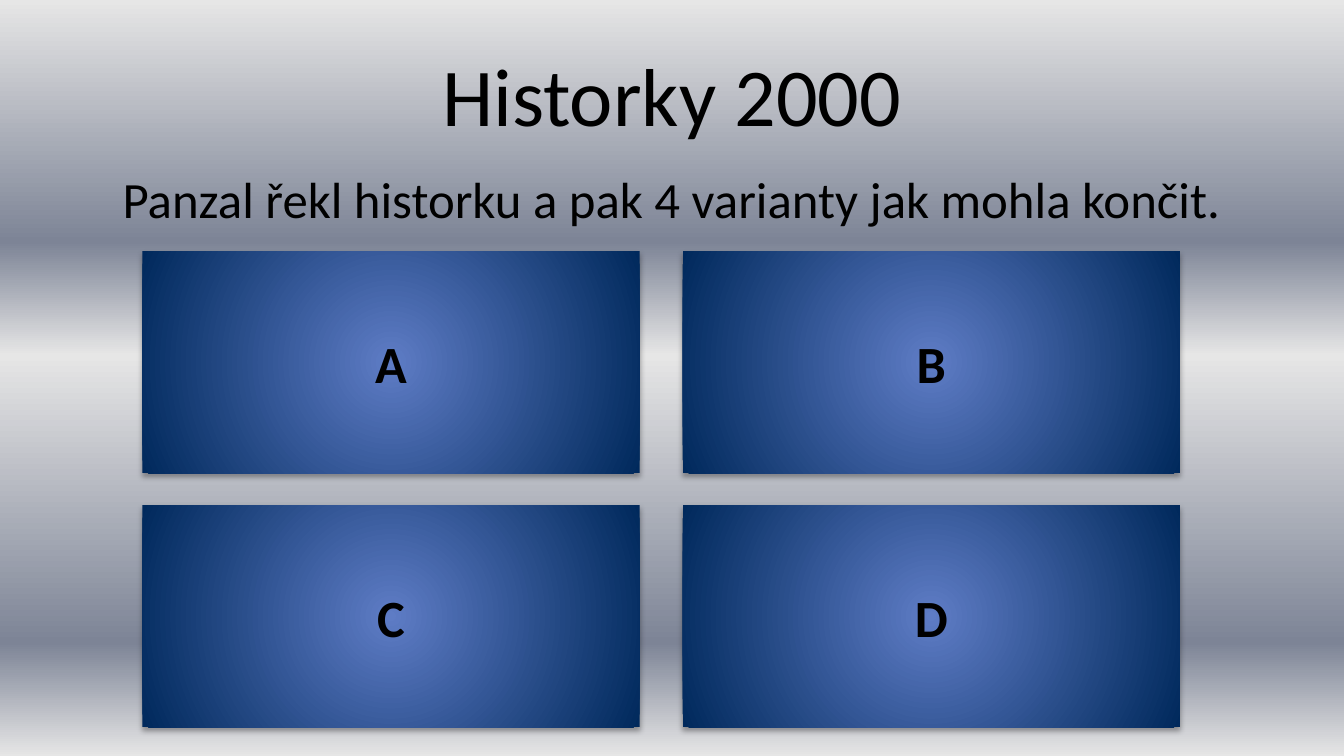
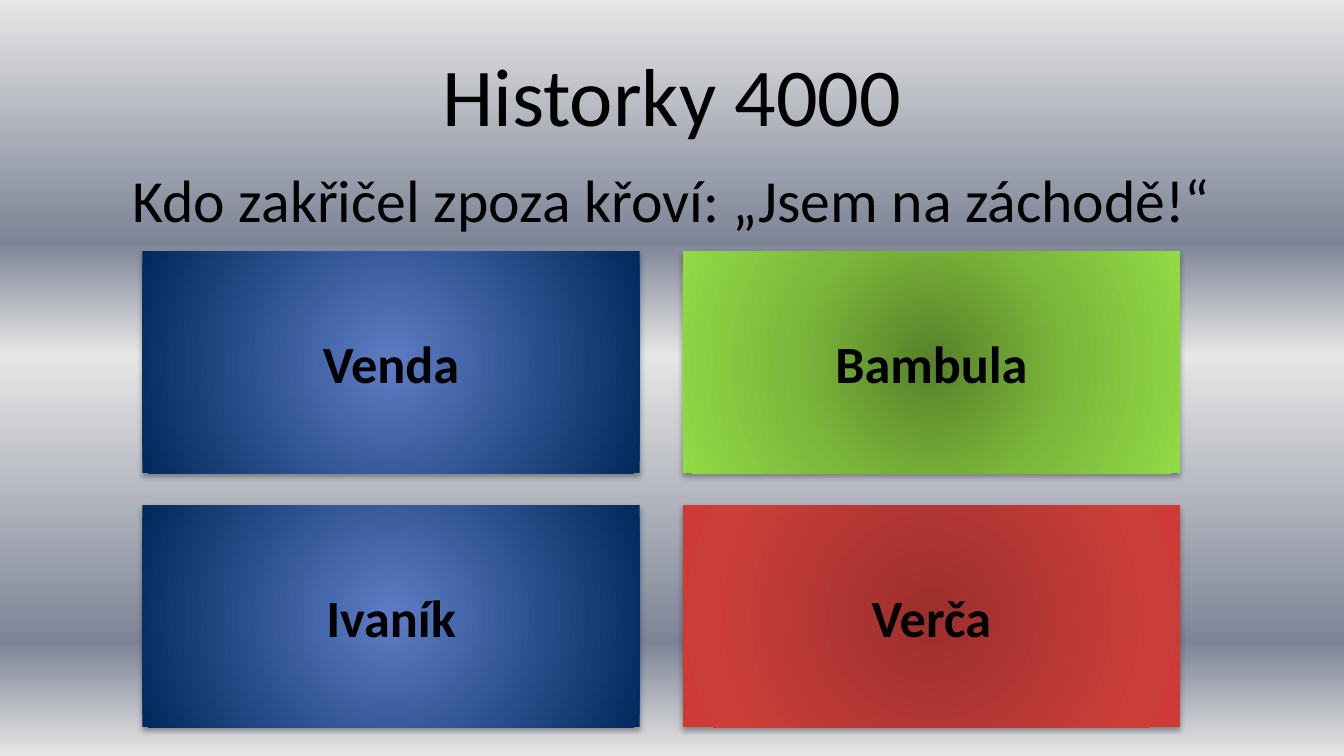
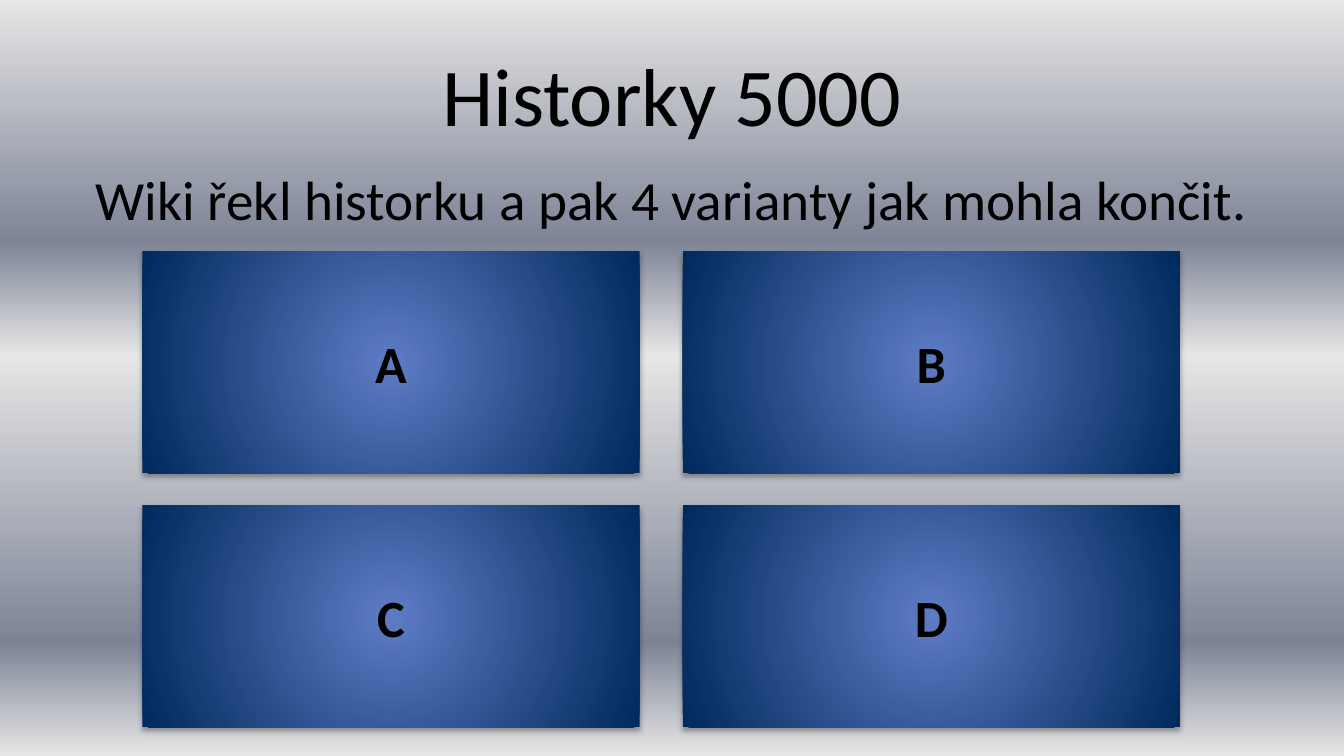
from lxml.etree import SubElement
from pptx import Presentation
from pptx.dml.color import RGBColor
from pptx.enum.shapes import MSO_SHAPE as Shape
from pptx.enum.text import MSO_ANCHOR as Anchor, MSO_AUTO_SIZE as AutoSize, PP_ALIGN as Align
from pptx.oxml.ns import qn
from pptx.util import Pt

SILVER = [(0, "E6E6E6"), (32, "7D8496"), (47, "E6E6E6"), (85, "7D8496"), (100, "E6E6E6")]
BLUE = [(0, "5E7CC5"), (100, "00295C")]
GREEN = [(0, "57812A"), (50, "7BB73B"), (100, "92DA46")]
RED = [(0, "9C2F2D"), (80, "CB3E3A"), (100, "CE3B37")]

QUIZ = [
    ("Historky 2000", "Panzal řekl historku a pak 4 varianty jak mohla končit.", 27.2,
     [("A", BLUE), ("B", BLUE), ("C", BLUE), ("D", BLUE)]),
    ("Historky 4000", "Kdo zakřičel zpoza křoví: „Jsem na záchodě!“", 32,
     [("Venda", BLUE), ("Bambula", GREEN), ("Ivaník", BLUE), ("Verča", RED)]),
    ("Historky 5000", "Wiki řekl historku a pak 4 varianty jak mohla končit.", 29.6,
     [("A", BLUE), ("B", BLUE), ("C", BLUE), ("D", BLUE)]),
]


def rgb(value):
    return RGBColor.from_string(value)


def add(parent, tag, **attrs):
    return SubElement(parent, qn(tag), {k: str(v) for k, v in attrs.items()})


def write(sp, text, size=28, bold=False, color="000000", font="Calibri"):
    tf = sp.text_frame
    tf.word_wrap = True
    tf.auto_size = AutoSize.NONE
    tf.vertical_anchor = Anchor.MIDDLE
    p = tf.paragraphs[0]
    p.alignment = Align.CENTER
    r = p.add_run()
    r.text = text
    r.font.name = font
    r.font.size = Pt(size)
    r.font.bold = bold
    r.font.color.rgb = rgb(color)


def set_gradient(owner, fill, stops, radial=False):
    fill.gradient()
    grad = next(owner.iter(qn("a:gradFill")))
    for child in list(grad):
        grad.remove(child)
    gs_list = add(grad, "a:gsLst")
    for pos, color in stops:
        add(add(gs_list, "a:gs", pos=pos * 1000), "a:srgbClr", val=color)
    if radial:
        circle = add(grad, "a:path", path="circle")
        add(circle, "a:fillToRect", l=50000, t=50000, r=50000, b=50000)
    else:
        add(grad, "a:lin", ang=90 * 60000, scaled=0)


class QuizDeck:
    """Quiz slides with a title, a question and a grid of answer cards."""

    left, top = 76.32, 134.64
    card_w, card_h = 266.4, 118.8
    step_x, step_y = 289.44, 136.08

    def __init__(self):
        self.prs = Presentation()
        self.prs.slide_width, self.prs.slide_height = Pt(720), Pt(405)
        master = self.prs.slide_master
        set_gradient(master.element, master.background.fill, SILVER)

    def new_slide(self):
        self.slide = self.prs.slides.add_slide(self.prs.slide_layouts[5])

    def title(self, text):
        sp = self.slide.shapes.title
        sp.left, sp.top, sp.width, sp.height = Pt(36), Pt(16.2), Pt(648), Pt(67.5)
        write(sp, text, size=44)

    def question(self, text, size):
        sp = self.slide.shapes.add_textbox(Pt(36), Pt(77.76), Pt(648), Pt(56.88))
        write(sp, text, size=size)

    def card(self, index, text, stops):
        row, col = divmod(index, 2)
        sp = self.slide.shapes.add_shape(
            Shape.RECTANGLE, Pt(self.left + col * self.step_x), Pt(self.top + row * self.step_y),
            Pt(self.card_w), Pt(self.card_h))
        set_gradient(sp.element.spPr, sp.fill, stops, radial=True)
        sp.line.fill.background()
        self.shadow(sp)
        write(sp, text, bold=True)

    def shadow(self, sp):
        sp.shadow.inherit = False
        effects = sp.element.spPr.find(qn("a:effectLst"))
        outer = add(effects, "a:outerShdw", blurRad=Pt(3.15), dist=Pt(1.8),
                    dir=90 * 60000, rotWithShape=0)
        add(add(outer, "a:srgbClr", val="000000"), "a:alpha", val=35000)


def main():
    deck = QuizDeck()
    for title, question, size, answers in QUIZ:
        deck.new_slide()
        deck.title(title)
        deck.question(question, size)
        for i, (answer, stops) in enumerate(answers):
            deck.card(i, answer, stops)
    deck.prs.save("out.pptx")


if __name__ == "__main__":
    main()
